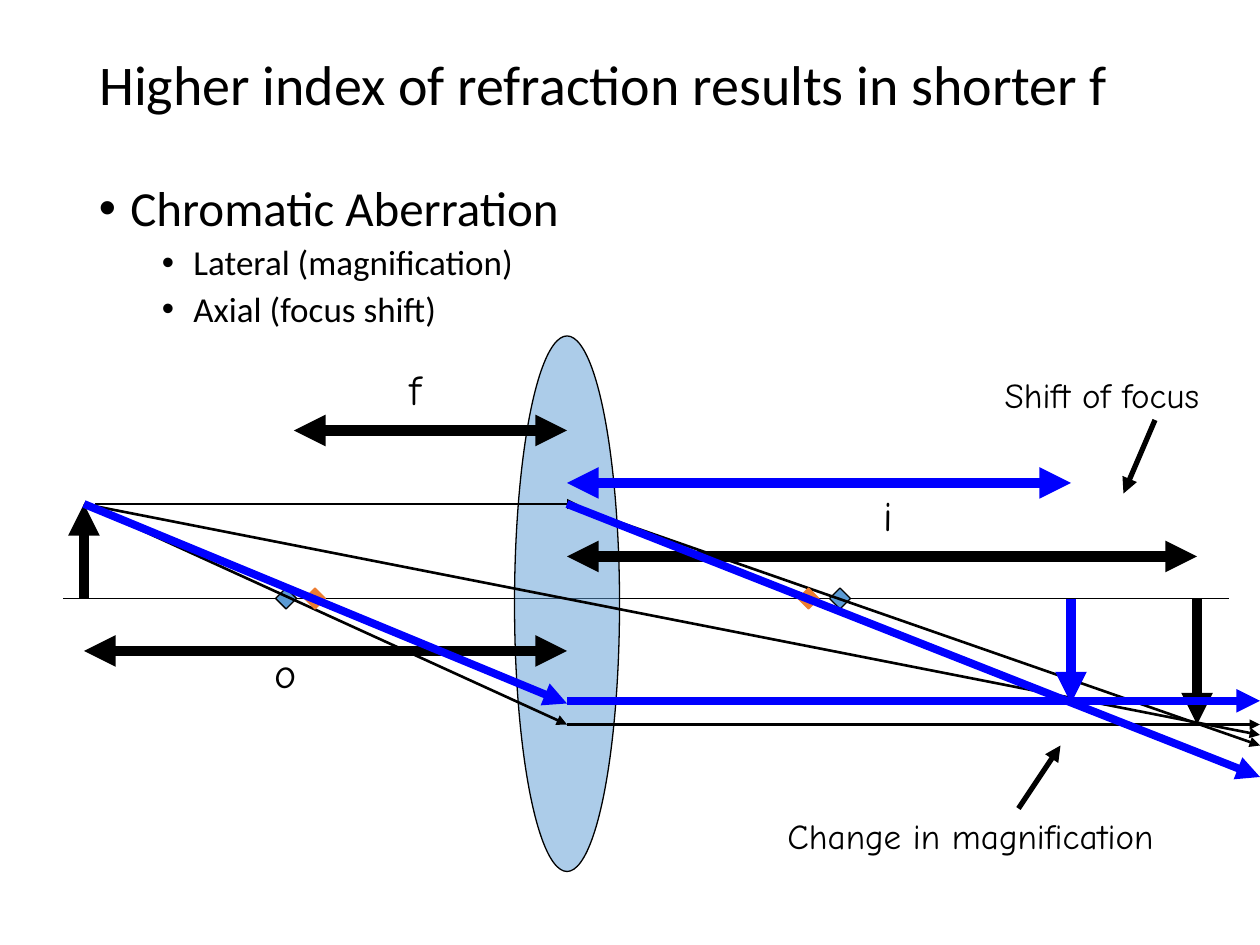
from lxml.etree import SubElement
from pptx import Presentation
from pptx.dml.color import RGBColor
from pptx.enum.shapes import MSO_CONNECTOR, MSO_SHAPE
from pptx.enum.text import MSO_ANCHOR, MSO_AUTO_SIZE, PP_ALIGN
from pptx.oxml.ns import qn
from pptx.util import Inches, Pt

BLACK = RGBColor(0x00, 0x00, 0x00)
BLUE = RGBColor(0x00, 0x00, 0xFF)
GLASS = RGBColor(0x5B, 0x9B, 0xD5)
ORANGE = RGBColor(0xED, 0x7D, 0x31)

LENS, AXIS, OBJECT, TIP, EDGE = 54, 57, 8, 48, 120
IMAGE, BLUE_IMAGE = 114, 102


class OpticsSlide:
    unit = Inches(1) / 12
    heading_font = "Calibri"
    label_font = "Comic Neue"

    def __init__(self, deck):
        self.slide = deck.slides.add_slide(deck.slide_layouts[5])
        self.shapes = self.slide.shapes

    def grid(self, *cells):
        return [round(cell * self.unit) for cell in cells]

    def style(self, paragraph, font, size):
        for run in paragraph.runs:
            run.font.name = font
            run.font.size = Pt(size)
            run.font.color.rgb = BLACK

    def title(self, text, box):
        heading = self.shapes.title
        heading.left, heading.top, heading.width, heading.height = self.grid(*box)
        frame = heading.text_frame
        frame.text = text
        frame.auto_size = MSO_AUTO_SIZE.NONE
        frame.vertical_anchor = MSO_ANCHOR.TOP
        paragraph = frame.paragraphs[0]
        paragraph.alignment = PP_ALIGN.LEFT
        paragraph.line_spacing = 0.9
        self.style(paragraph, self.heading_font, 32)

    def bullets(self, items, box):
        frame = self.shapes.add_textbox(*self.grid(*box)).text_frame
        frame.word_wrap = True
        frame.text = "\n".join(text for text, level in items)
        for paragraph, (text, level) in zip(frame.paragraphs, items):
            size, before, margin = ((28, 10, 0.25), (20, 5, 0.75))[level]
            paragraph.level = level
            paragraph.line_spacing = 0.9
            paragraph.space_before = Pt(before)
            self.style(paragraph, self.heading_font, size)
            properties = paragraph._p.get_or_add_pPr()
            properties.set("marL", str(Inches(margin)))
            properties.set("indent", str(Inches(-0.25)))
            SubElement(properties, qn("a:buFont"), typeface="Arial")
            SubElement(properties, qn("a:buChar"), char="•")

    def label(self, text, box, size, align=PP_ALIGN.LEFT):
        frame = self.shapes.add_textbox(*self.grid(*box)).text_frame
        frame.word_wrap = False
        frame.text = text
        frame.paragraphs[0].alignment = align
        self.style(frame.paragraphs[0], self.label_font, size)

    def line(self, start, end, width, color=BLACK, ends=("tailEnd",)):
        connector = self.shapes.add_connector(
            MSO_CONNECTOR.STRAIGHT, *self.grid(*start, *end))
        connector.line.color.rgb = color
        connector.line.width = Pt(width)
        for end_name in ends:
            SubElement(connector.line._get_or_add_ln(), qn(f"a:{end_name}"), type="triangle")
        SubElement(connector._element.spPr, qn("a:effectLst"))

    def span(self, left, right, row, color=BLACK):
        self.line((left, row), (right, row), 6, color, ("headEnd", "tailEnd"))

    def solid(self, preset, box, fill, outline=BLACK, opacity=100):
        shape = self.shapes.add_shape(preset, *self.grid(*box))
        shape.shadow.inherit = False
        shape.fill.solid()
        shape.fill.fore_color.rgb = fill
        shape.line.color.rgb = outline
        shape.line.width = Pt(0.75)
        if opacity < 100:
            color = shape._element.spPr.find(qn("a:solidFill"))[0]
            SubElement(color, qn("a:alpha"), val=str(opacity * 1000))

    def focal_point(self, column, fill, outline):
        self.solid(MSO_SHAPE.DIAMOND, (column - 1, AXIS - 1, 2, 2), fill, outline)


def main():
    deck = Presentation()
    deck.slide_width, deck.slide_height = Inches(10), Inches(7.5)
    optics = OpticsSlide(deck)

    optics.title("Higher index of refraction results in shorter f", (8.25, 4.8, 103.5, 12))
    optics.bullets([("Chromatic Aberration", 0),
                    ("Lateral (magnification)", 1),
                    ("Axial (focus shift)", 1)], (8.25, 16.9, 103.5, 15))

    optics.line((6, AXIS), (117, AXIS), 0.75, ends=())
    optics.solid(MSO_SHAPE.OVAL, (LENS - 5, 32, 10, 51), GLASS, opacity=50)
    optics.line((OBJECT, TIP), (EDGE, 70), 1.5)
    for column in (80, 27.25):
        optics.focal_point(column, GLASS, BLACK)

    optics.line((OBJECT, AXIS), (OBJECT, TIP), 6)
    for start, end in [((9, TIP), (LENS + 1, TIP)),
                       ((LENS, TIP), (EDGE, 71)),
                       ((OBJECT, TIP), (LENS, 69)),
                       ((LENS, 69), (EDGE, 69))]:
        optics.line(start, end, 1.5)
    optics.line((IMAGE, AXIS), (IMAGE, 69), 6)

    optics.span(28, LENS, 41)
    optics.span(LENS, IMAGE, 53)
    optics.span(OBJECT, LENS, 62)
    for text, left, top, width in [("f", 37.8, 34, 4.4),
                                   ("o", 25, 61, 4.6),
                                   ("i", 83, 46, 3.6)]:
        optics.label(text, (left, top, width, 6.8), 24)

    for column in (30, 77):
        optics.focal_point(column, ORANGE, ORANGE)
    for start, end in [((LENS, TIP), (EDGE, 74)),
                       ((OBJECT, TIP), (LENS, 67)),
                       ((LENS, 66.75), (EDGE, 66.75))]:
        optics.line(start, end, 4.5, BLUE)
    optics.line((BLUE_IMAGE, AXIS), (BLUE_IMAGE, 67), 6, BLUE)
    optics.span(LENS, BLUE_IMAGE, 46, BLUE)

    optics.label("Shift of focus", (92.6, 35, 24.7, 5.9), 20, PP_ALIGN.CENTER)
    optics.line((110, 40), (107, 47), 3)
    optics.label("Change in magnification", (73, 77, 38.9, 5.9), 20, PP_ALIGN.CENTER)
    optics.line((97, 77), (101, 71), 3)

    deck.save("out.pptx")


if __name__ == "__main__":
    main()
